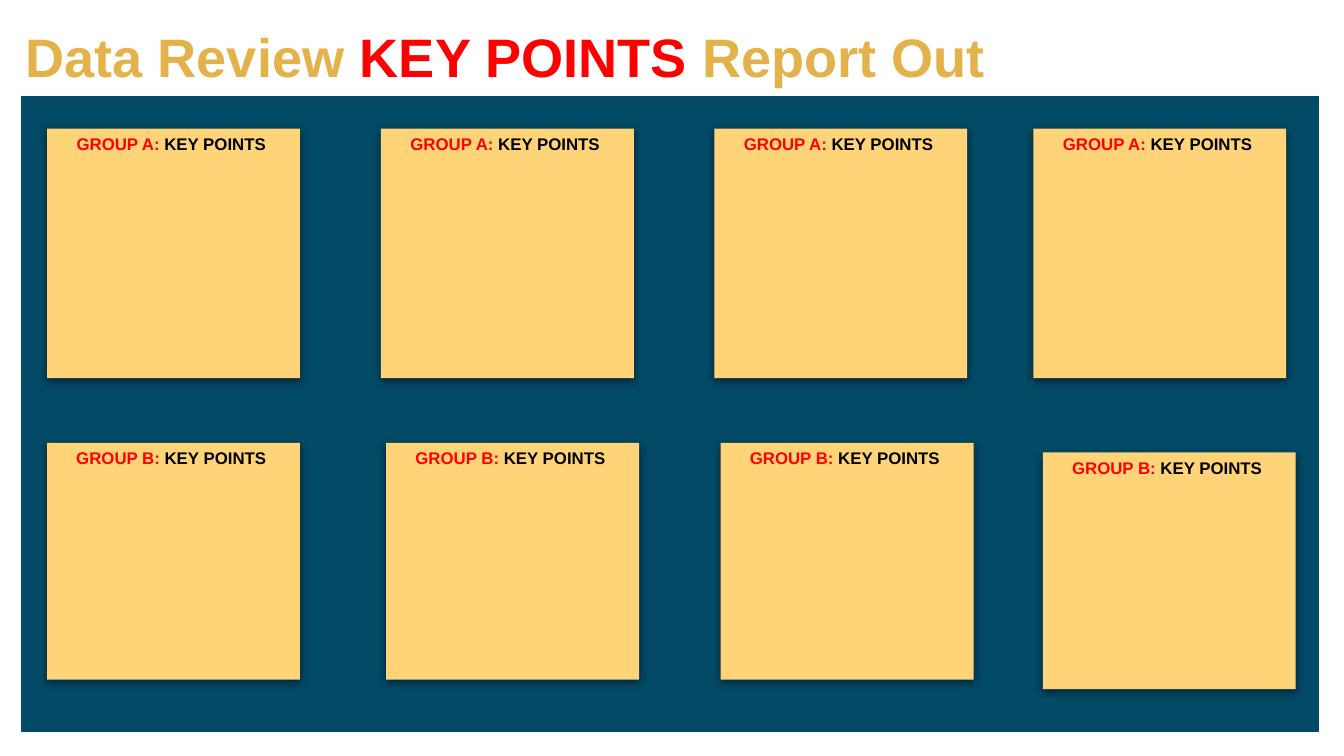
from lxml import etree
from pptx import Presentation
from pptx.dml.color import RGBColor
from pptx.enum.shapes import MSO_SHAPE
from pptx.enum.text import MSO_ANCHOR, MSO_AUTO_SIZE, PP_ALIGN
from pptx.oxml.ns import qn
from pptx.util import Cm, Pt

RECT = MSO_SHAPE.RECTANGLE
TOP, MIDDLE = MSO_ANCHOR.TOP, MSO_ANCHOR.MIDDLE
LEFT, CENTER = PP_ALIGN.LEFT, PP_ALIGN.CENTER
NO_AUTOFIT = MSO_AUTO_SIZE.NONE

TEAL = RGBColor(0x02, 0x4A, 0x66)
SAND = RGBColor(0xFF, 0xD4, 0x78)
GOLD = RGBColor(0xE3, 0xB2, 0x4A)
RED = RGBColor(0xFF, 0x00, 0x00)
BLACK = RGBColor(0x00, 0x00, 0x00)

NOTE_WIDTH = 4.78
NOTE_ROWS = [
    ("GROUP A:", 4.72, [(0.89, 2.43), (7.2, 2.43), (13.5, 2.43), (19.53, 2.43)]),
    ("GROUP B:", 4.48, [(0.89, 8.37), (7.3, 8.37), (13.62, 8.37), (19.71, 8.55)]),
]


def write_text(tf, runs, size, font="Arial", bold=True, align=LEFT, anchor=TOP, inset=0):
    tf.word_wrap = True
    tf.auto_size = NO_AUTOFIT
    tf.vertical_anchor = anchor
    tf.margin_left = tf.margin_right = tf.margin_top = tf.margin_bottom = Cm(inset)
    p = tf.paragraphs[0]
    p.alignment = align
    for text, color in runs:
        r = p.add_run()
        r.text = text
        r.font.name = font
        r.font.size = Pt(size)
        r.font.bold = bold
        r.font.color.rgb = color


class Board:
    title_size = 29
    note_size = 9
    note_inset = 0.1

    def __init__(self, slide):
        self.slide = slide

    def title(self, x, y, w, h, runs):
        sp = self.slide.shapes.title
        sp.left, sp.top, sp.width, sp.height = Cm(x), Cm(y), Cm(w), Cm(h)
        write_text(sp.text_frame, runs, self.title_size, anchor=MIDDLE)

    def rect(self, x, y, w, h, fill):
        sp = self.slide.shapes.add_shape(RECT, Cm(x), Cm(y), Cm(w), Cm(h))
        sp.shadow.inherit = False
        sp.fill.solid()
        sp.fill.fore_color.rgb = fill
        return sp

    def panel(self, x, y, w, h):
        sp = self.rect(x, y, w, h, TEAL)
        sp.line.color.rgb = TEAL
        sp.line.width = Pt(0.75)
        self.slide.shapes.title.element.addprevious(sp.element)

    def note(self, x, y, w, h, runs):
        sp = self.rect(x, y, w, h, SAND)
        sp.line.fill.background()
        self.drop_shadow(sp)
        write_text(sp.text_frame, runs, self.note_size, align=CENTER, inset=self.note_inset)

    def drop_shadow(self, sp):
        effects = sp.element.spPr.find(qn("a:effectLst"))
        shadow = etree.SubElement(
            effects, qn("a:outerShdw"), blurRad=str(Pt(4.5)), dist=str(Pt(1.5)),
            dir="5400000", rotWithShape="0")
        color = etree.SubElement(shadow, qn("a:srgbClr"), val=str(BLACK))
        etree.SubElement(color, qn("a:alpha"), val="49000")


def main():
    prs = Presentation()
    prs.slide_width, prs.slide_height = Cm(25.4), Cm(14.29)
    board = Board(prs.slides.add_slide(prs.slide_layouts[5]))
    board.panel(0.41, 1.83, 24.51, 11.99)
    board.title(0.48, 0.15, 24.43, 1.8, [
        ("Data Review ", GOLD), ("KEY POINTS", RED), (" Report Out", GOLD)])
    for group, height, places in NOTE_ROWS:
        for x, y in places:
            board.note(x, y, NOTE_WIDTH, height, [(group, RED), (" KEY POINTS ", BLACK)])
    prs.save("out.pptx")


if __name__ == "__main__":
    main()
